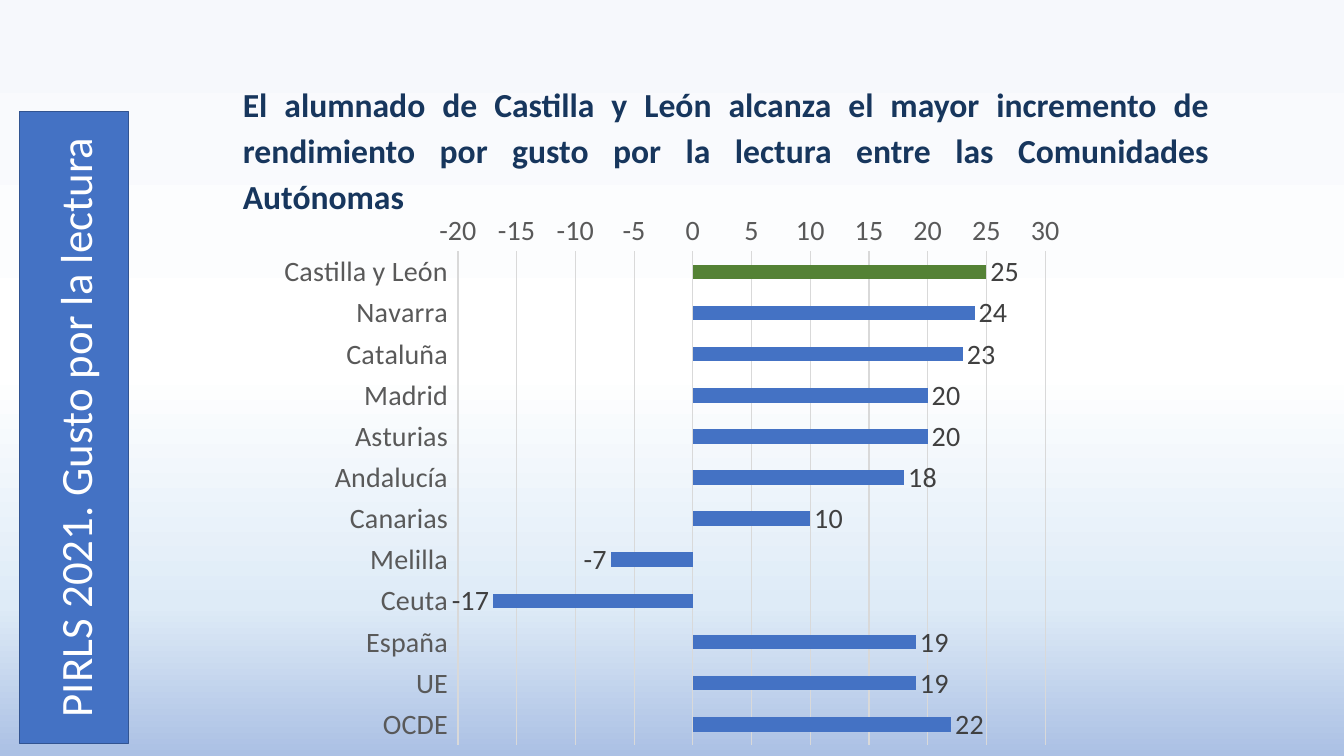
"""Build a slide with a bar chart of reading enjoyment and performance by region."""
import pptx
import pptx.chart.data
import pptx.dml.color
import pptx.enum.chart
import pptx.enum.shapes
import pptx.enum.text
import pptx.oxml
import pptx.oxml.ns
import pptx.util
from pptx.util import Inches

FONT = "Calibri"
HEADLINE = (
    "El alumnado de Castilla y León alcanza el mayor incremento de rendimiento "
    "por gusto por la lectura entre las Comunidades Autónomas"
)
BANNER = "PIRLS 2021. Gusto por la lectura"
SCORES = {
    "Castilla y León": 25,
    "Navarra": 24,
    "Cataluña": 23,
    "Madrid": 20,
    "Asturias": 20,
    "Andalucía": 18,
    "Canarias": 10,
    "Melilla": -7,
    "Ceuta": -17,
    "España": 19,
    "UE": 19,
    "OCDE": 22,
}
HIGHLIGHT = "Castilla y León"
BACKGROUND_STOPS = [(0, "F6F8FC"), (49, "FFFFFF"), (80, "DEEBF7"), (100, "ABC0E4")]
BLUE, GREEN, GREY, GRID = "4472C4", "548235", "595959", "D9D9D9"


def paint(target, color):
    if hasattr(target, "solid"):
        target.solid()
        target.fore_color.rgb = pptx.dml.color.RGBColor.from_string(color)
    else:
        target.rgb = pptx.dml.color.RGBColor.from_string(color)


def style_font(font, size, color, bold=False):
    font.name = FONT
    font.size = pptx.util.Pt(size)
    font.bold = bold
    paint(font.color, color)


def style_line(line, color, width):
    paint(line.fill, color)
    line.width = pptx.util.Pt(width)


def write(shape, text, size, color, align, bold=False, anchor="TOP", spacing=None, after=None):
    box = shape.text_frame
    box.word_wrap = True
    box.vertical_anchor = pptx.enum.text.MSO_ANCHOR[anchor]
    para = box.paragraphs[0]
    para.alignment = pptx.enum.text.PP_ALIGN[align]
    para.line_spacing = spacing
    para.space_after = after
    span = para.add_run()
    span.text = text
    style_font(span.font, size, color, bold)


def fill_background(page):
    fill = page.background.fill
    fill.gradient()
    fill.gradient_angle = 270
    properties = page.background._cSld.bg.bgPr
    stops = properties.find(".//" + pptx.oxml.ns.qn("a:gsLst"))
    stops.clear()
    for percent, color in BACKGROUND_STOPS:
        stops.append(pptx.oxml.parse_xml(
            f'<a:gs {pptx.oxml.ns.nsdecls("a")} pos="{percent * 1000}">'
            f'<a:srgbClr val="{color}"/></a:gs>'
        ))


def add_scores(page):
    data = pptx.chart.data.CategoryChartData()
    data.categories = list(SCORES)
    data.add_series("Series 1", list(SCORES.values()))
    chart = page.shapes.add_chart(
        pptx.enum.chart.XL_CHART_TYPE.BAR_CLUSTERED,
        Inches(2.66), Inches(2), Inches(8.01), Inches(5.5), data,
    ).chart
    chart.has_legend = False
    chart.has_title = False
    style_font(chart.font, 20, "000000")

    regions, points = chart.category_axis, chart.value_axis
    for axis in (regions, points):
        axis.major_tick_mark = pptx.enum.chart.XL_TICK_MARK.NONE
        axis.minor_tick_mark = pptx.enum.chart.XL_TICK_MARK.NONE
        style_font(axis.tick_labels.font, 20, GREY)
    regions.reverse_order = True
    regions.tick_label_position = pptx.enum.chart.XL_TICK_LABEL_POSITION.LOW
    style_line(regions.format.line, GRID, 0.75)
    points.minimum_scale, points.maximum_scale, points.major_unit = -20, 30, 5
    points.format.line.fill.background()
    style_line(points.major_gridlines.format.line, GRID, 0.75)

    plot = chart.plots[0]
    plot.gap_width = 182
    plot.vary_by_categories = False
    series = plot.series[0]
    series.invert_if_negative = False
    paint(series.format.fill, BLUE)
    paint(series.points[list(SCORES).index(HIGHLIGHT)].format.fill, GREEN)
    labels = series.data_labels
    labels.show_value = True
    labels.position = pptx.enum.chart.XL_LABEL_POSITION.OUTSIDE_END
    style_font(labels.font, 20, "404040")


def add_headline(page):
    headline = page.shapes.add_textbox(Inches(2.31), Inches(0.72), Inches(9.78), Inches(1.47))
    write(headline, HEADLINE, 24, "17365D", "JUSTIFY", bold=True, spacing=1.15,
          after=pptx.util.Pt(12))


def add_banner(page):
    banner = page.shapes.add_shape(
        pptx.enum.shapes.MSO_SHAPE.RECTANGLE,
        Inches(-2.4), Inches(3.7), Inches(6.27), Inches(1.08),
    )
    banner.rotation = 270
    banner.shadow.inherit = False
    paint(banner.fill, BLUE)
    style_line(banner.line, "325491", 1)
    write(banner, BANNER, 32, "FFFFFF", "CENTER", anchor="MIDDLE")


def main():
    deck = pptx.Presentation()
    deck.slide_width, deck.slide_height = Inches(13.33), Inches(7.5)
    page = deck.slides.add_slide(deck.slide_layouts[6])
    fill_background(page)
    add_scores(page)
    add_headline(page)
    add_banner(page)
    deck.save("out.pptx")


if __name__ == "__main__":
    main()
